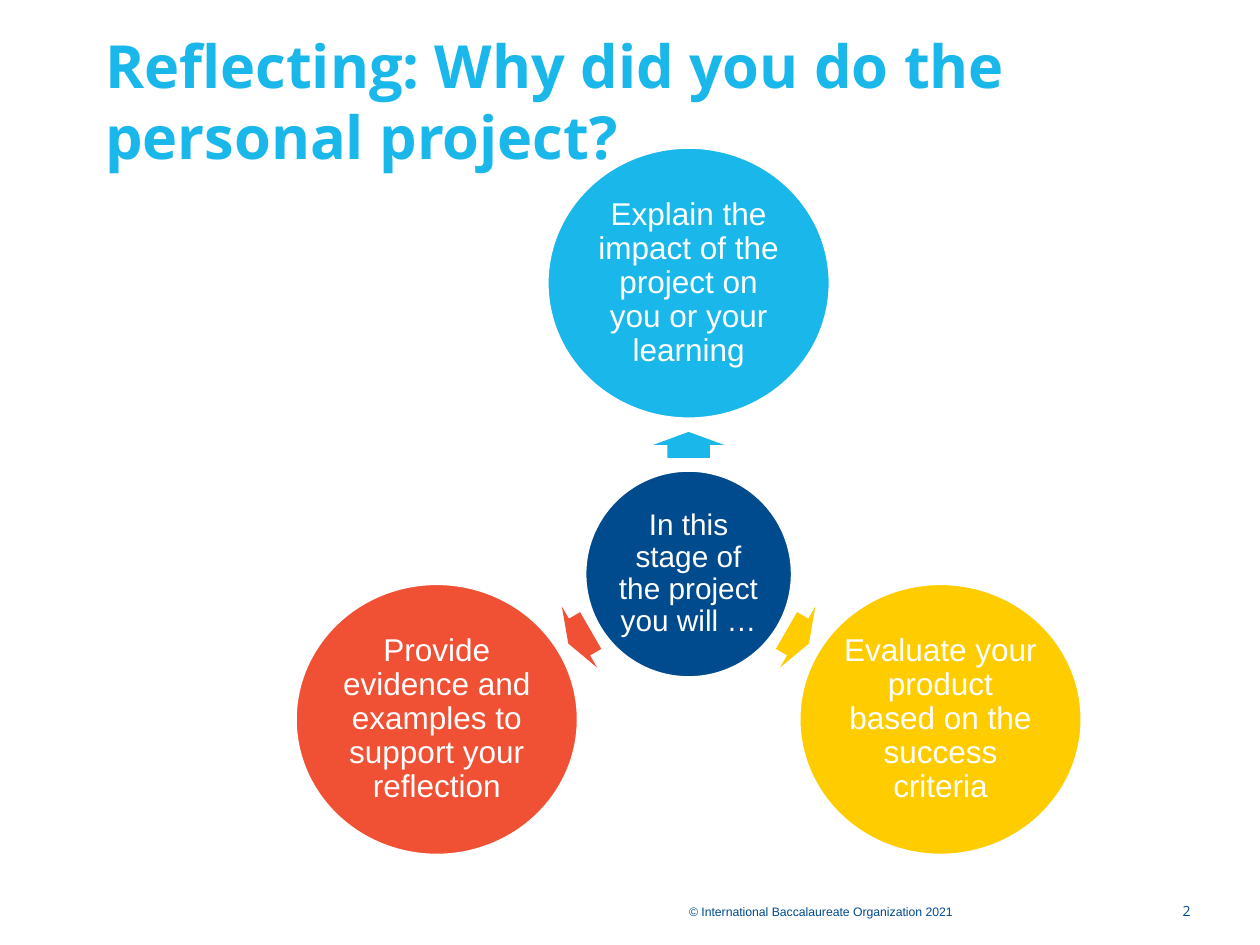
import math
from pptx import Presentation
from pptx.dml.color import RGBColor
from pptx.enum import shapes, text
from pptx.util import Pt

NAVY = RGBColor(0x00, 0x4B, 0x8D)
BLUE = RGBColor(0x1A, 0xB7, 0xEA)
YELLOW = RGBColor(0xFF, 0xCC, 0x00)
RED = RGBColor(0xF0, 0x50, 0x33)
WHITE = RGBColor(0xFF, 0xFF, 0xFF)

TITLE = "Reflecting: Why did you do the personal project?"
COPYRIGHT = "© International Baccalaureate Organization 2021"
PAGE_NUMBER = "2"
HUB = "In this stage of the project you will …"
TASKS = [
    ("Explain the impact of the project on you or your learning", BLUE, 270, 73.8),
    ("Evaluate your product based on the success criteria", YELLOW, 30, 72),
    ("Provide evidence and examples to support your reflection", RED, 150, 72),
]

CENTER = (393.5, 328)
HUB_SIZE = (118.8, 118.8)
TASK_SIZE = (162, 155.5)
TASK_DISTANCE = 166.2
ARROW_SIZE = (14.8, 40.4)


def write(shape, content, font, size, color, inset=0, spacing=None, bold=False,
          align=text.PP_ALIGN.LEFT, anchor=text.MSO_ANCHOR.TOP):
    frame = shape.text_frame
    frame.text = content
    frame.word_wrap = True
    frame.vertical_anchor = anchor
    frame.margin_left = frame.margin_right = Pt(inset)
    frame.margin_top = frame.margin_bottom = Pt(inset)
    paragraph = frame.paragraphs[0]
    paragraph.alignment = align
    if spacing:
        paragraph.line_spacing = spacing
    run_font = paragraph.runs[0].font
    run_font.name = font
    run_font.size = Pt(size)
    run_font.bold = bold
    run_font.color.rgb = color


def add_text(slide, box, *args, **options):
    write(slide.shapes.add_textbox(*map(Pt, box)), *args, **options)


def add_centered(slide, kind, center, size, color):
    left, top = (middle - length / 2 for middle, length in zip(center, size))
    shape = slide.shapes.add_shape(kind, *map(Pt, (left, top, *size)))
    shape.shadow.inherit = False
    shape.fill.solid()
    shape.fill.fore_color.rgb = color
    shape.line.fill.background()
    return shape


def add_circle(slide, center, size, color, content, font_size, inset):
    circle = add_centered(slide, shapes.MSO_SHAPE.OVAL, center, size, color)
    circle.line.color.rgb = WHITE
    circle.line.width = Pt(2)
    write(circle, content, "Arial", font_size, WHITE, inset, 0.9,
          align=text.PP_ALIGN.CENTER, anchor=text.MSO_ANCHOR.MIDDLE)


def along(angle, distance):
    radians = math.radians(angle)
    return (CENTER[0] + distance * math.cos(radians),
            CENTER[1] + distance * math.sin(radians))


def main():
    presentation = Presentation()
    presentation.slide_width = Pt(720)
    presentation.slide_height = Pt(540)
    slide = presentation.slides.add_slide(presentation.slide_layouts[6])

    add_text(slide, (393.8, 513.4, 192.2, 9.4), COPYRIGHT, "Arial", 7, NAVY, spacing=1.43)
    add_text(slide, (60, 25.2, 620.6, 72.7), TITLE, "Open Sans", 34, BLUE,
             bold=True, anchor=text.MSO_ANCHOR.BOTTOM)
    add_text(slide, (660.2, 513.4, 20.2, 11.5), PAGE_NUMBER, "Open Sans", 8, NAVY,
             spacing=1.25, align=text.PP_ALIGN.RIGHT)

    add_circle(slide, CENTER, HUB_SIZE, NAVY, HUB, 17, 1.7)
    for content, color, angle, arrow_distance in TASKS:
        arrow = add_centered(slide, shapes.MSO_SHAPE.RIGHT_ARROW,
                             along(angle, arrow_distance), ARROW_SIZE, color)
        arrow.adjustments[0] = 0.6
        arrow.adjustments[1] = 0.5
        arrow.rotation = angle
        add_circle(slide, along(angle, TASK_DISTANCE), TASK_SIZE, color, content, 18, 1.8)

    presentation.save("out.pptx")


if __name__ == "__main__":
    main()
